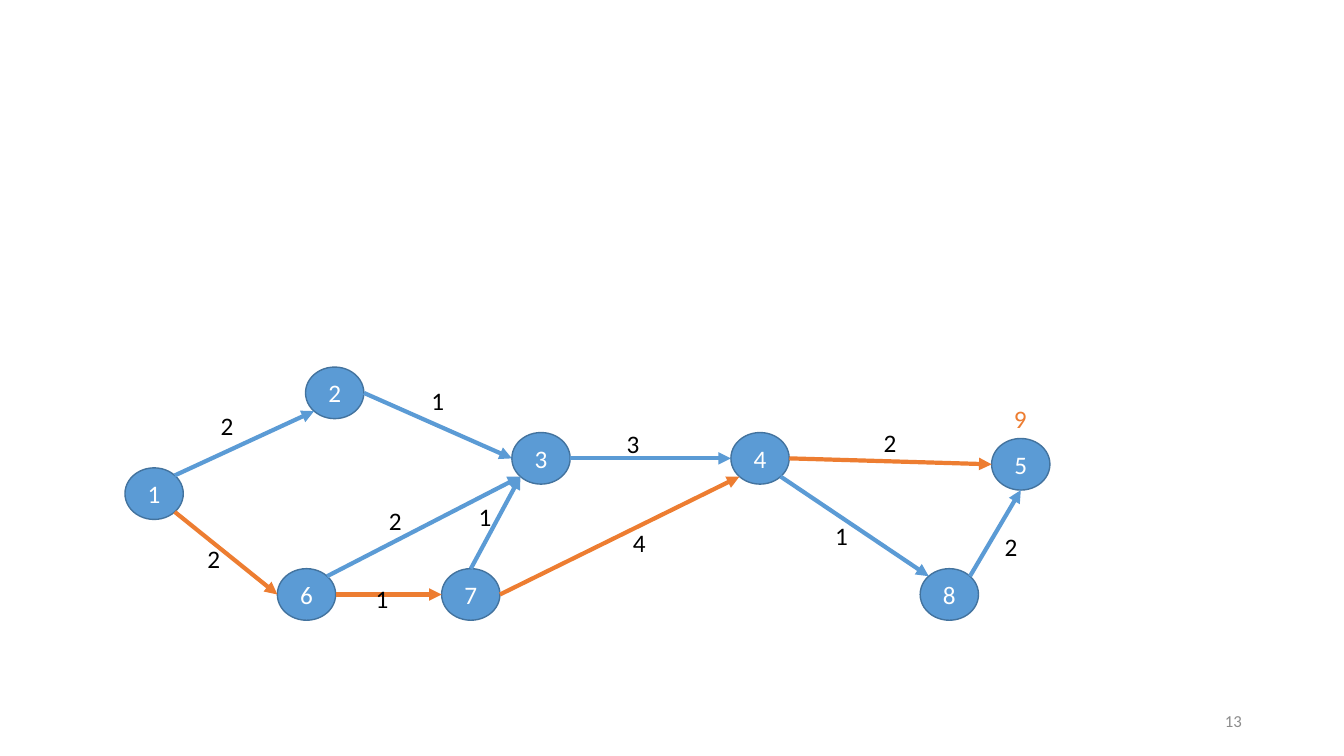
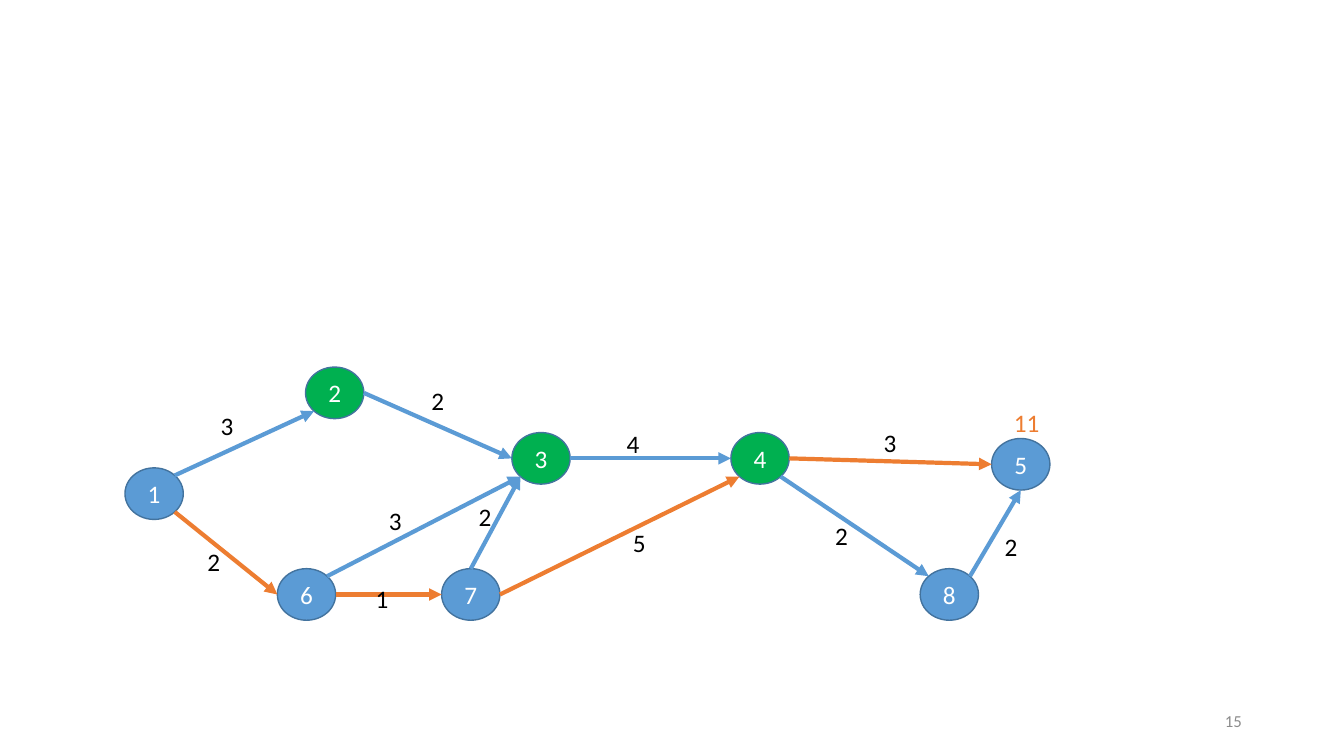
from math import cos, pi, sin

from lxml.etree import SubElement
from pptx import Presentation
from pptx.dml.color import RGBColor
from pptx.enum.shapes import MSO_CONNECTOR, MSO_SHAPE
from pptx.enum.text import MSO_ANCHOR, MSO_AUTO_SIZE, PP_ALIGN
from pptx.oxml.ns import qn
from pptx.util import Cm, Pt

# Colours
BLUE, OUTLINE, GREEN, ORANGE = "5B9BD5", "43739E", "00B050", "ED7D31"
WHITE, BLACK, GREY = "FFFFFF", "000000", "8C8C8C"

# Text formats
NUMBER_FONT = {"name": "Calibri", "size": Pt(18)}
FOOTER_FONT = {"name": "Calibri", "size": Pt(12)}
CENTRED_FRAME = {"word_wrap": True, "vertical_anchor": MSO_ANCHOR.MIDDLE}
LABEL_FRAME = {"word_wrap": False, "auto_size": MSO_AUTO_SIZE.SHAPE_TO_FIT_TEXT}

# Graph geometry in centimetres
NODE_WIDTH, NODE_HEIGHT = 1.47, 1.3
LABEL_HEIGHT = 1.02
NODES = {
    1: (3.15, 11.79), 2: (7.7, 9.25), 3: (12.9, 10.9), 4: (18.42, 10.9),
    5: (24.99, 11.05), 6: (6.99, 14.33), 7: (11.13, 14.33), 8: (23.19, 14.33),
}

# Connection sites of an ellipse, counted anticlockwise from the top
(TOP, TOP_LEFT, LEFT, BOTTOM_LEFT,
 BOTTOM, BOTTOM_RIGHT, RIGHT, TOP_RIGHT) = range(8)

# (from node, to node): (start site, end site, label position)
EDGES = {
    (1, 2): (TOP_RIGHT, BOTTOM_LEFT, (5.31, 10.21)),
    (2, 3): (RIGHT, LEFT, (10.62, 9.58)),
    (3, 4): (RIGHT, LEFT, (15.54, 10.67)),
    (4, 5): (RIGHT, LEFT, (22.02, 10.64)),
    (4, 8): (BOTTOM_RIGHT, TOP_LEFT, (20.8, 12.98)),
    (8, 5): (TOP_RIGHT, BOTTOM, (25.07, 13.26)),
    (7, 4): (RIGHT, BOTTOM_LEFT, (15.7, 13.16)),
    (7, 3): (TOP, BOTTOM_LEFT, (11.81, 12.52)),
    (6, 7): (RIGHT, LEFT, (9.22, 14.58)),
    (1, 6): (BOTTOM_RIGHT, LEFT, (4.98, 13.56)),
    (6, 3): (TOP_RIGHT, BOTTOM_LEFT, (9.55, 12.62)),
}
CRITICAL_PATH = {(1, 6), (6, 7), (7, 4), (4, 5)}

# What differs between the slides; weights follow the order of EDGES
SLIDES = [
    {"page": "13", "weights": [2, 1, 3, 2, 1, 2, 4, 1, 1, 2, 2], "marked": set(),
     "total": "9", "total_box": (25.3, 10.03, 0.84), "moved_labels": {}},
    {"page": "15", "weights": [3, 2, 4, 3, 2, 2, 5, 2, 1, 2, 3], "marked": {2, 3, 4},
     "total": "11", "total_box": (25.3, 10.13, 1.17),
     "moved_labels": {(1, 6): (4.98, 13.64)}},
]


def rgb(hex_value):
    return RGBColor.from_string(hex_value)


def apply_format(target, values):
    for name, value in values.items():
        setattr(target, name, value)


def write_text(shape, text, colour, font, frame, alignment=PP_ALIGN.LEFT):
    apply_format(shape.text_frame, frame)
    paragraph = shape.text_frame.paragraphs[0]
    paragraph.alignment = alignment
    run = paragraph.add_run()
    run.text = text
    apply_format(run.font, font)
    run.font.color.rgb = rgb(colour)


def add_node(slide, number, fill):
    left, top = NODES[number]
    shape = slide.shapes.add_shape(
        MSO_SHAPE.OVAL, Cm(left), Cm(top), Cm(NODE_WIDTH), Cm(NODE_HEIGHT))
    shape.shadow.inherit = False
    shape.fill.solid()
    shape.fill.fore_color.rgb = rgb(fill)
    shape.line.color.rgb = rgb(OUTLINE)
    shape.line.width = Pt(1)
    write_text(shape, str(number), WHITE, NUMBER_FONT, CENTRED_FRAME, PP_ALIGN.CENTER)
    return shape


def site_point(number, site):
    left, top = NODES[number]
    angle = pi / 2 + site * pi / 4
    return (Cm(left + NODE_WIDTH / 2 * (1 + cos(angle))),
            Cm(top + NODE_HEIGHT / 2 * (1 - sin(angle))))


def add_edge(slide, nodes, edge, colour):
    start, end = edge
    start_site, end_site, _ = EDGES[edge]
    connector = slide.shapes.add_connector(
        MSO_CONNECTOR.STRAIGHT, *site_point(start, start_site), *site_point(end, end_site))
    connector.line.color.rgb = rgb(colour)
    connector.line.width = Pt(3)
    # Arrowhead, and no shadow
    SubElement(connector.line._get_or_add_ln(), qn("a:tailEnd"), type="triangle")
    SubElement(connector._element.spPr, qn("a:effectLst"))
    # Glue to the diagonal sites as well, which begin_connect does not offer
    glue = connector._element.find(".//" + qn("p:cNvCxnSpPr"))
    for tag, number, site in (("a:stCxn", start, start_site), ("a:endCxn", end, end_site)):
        SubElement(glue, qn(tag), id=str(nodes[number].shape_id), idx=str(site))


def add_label(slide, text, left, top, width=0.84, colour=BLACK):
    box = slide.shapes.add_textbox(Cm(left), Cm(top), Cm(width), Cm(LABEL_HEIGHT))
    write_text(box, text, colour, NUMBER_FONT, LABEL_FRAME)


def add_page_number(slide, text):
    box = slide.shapes.add_textbox(Cm(23.93), Cm(17.65), Cm(7.62), Cm(1.02))
    write_text(box, text, GREY, FOOTER_FONT, CENTRED_FRAME, PP_ALIGN.RIGHT)


def add_graph_slide(presentation, content):
    slide = presentation.slides.add_slide(presentation.slide_layouts[6])
    add_page_number(slide, content["page"])
    nodes = {number: add_node(slide, number, GREEN if number in content["marked"] else BLUE)
             for number in NODES}
    for edge in EDGES:
        add_edge(slide, nodes, edge, ORANGE if edge in CRITICAL_PATH else BLUE)
    # Edge weights and the length of the critical path
    for edge, weight in zip(EDGES, content["weights"]):
        position = content["moved_labels"].get(edge, EDGES[edge][2])
        add_label(slide, str(weight), *position)
    add_label(slide, content["total"], *content["total_box"], colour=ORANGE)


def main():
    presentation = Presentation()
    apply_format(presentation, {"slide_width": Cm(33.87), "slide_height": Cm(19.05)})
    for content in SLIDES:
        add_graph_slide(presentation, content)
    presentation.save("out.pptx")


if __name__ == "__main__":
    main()
